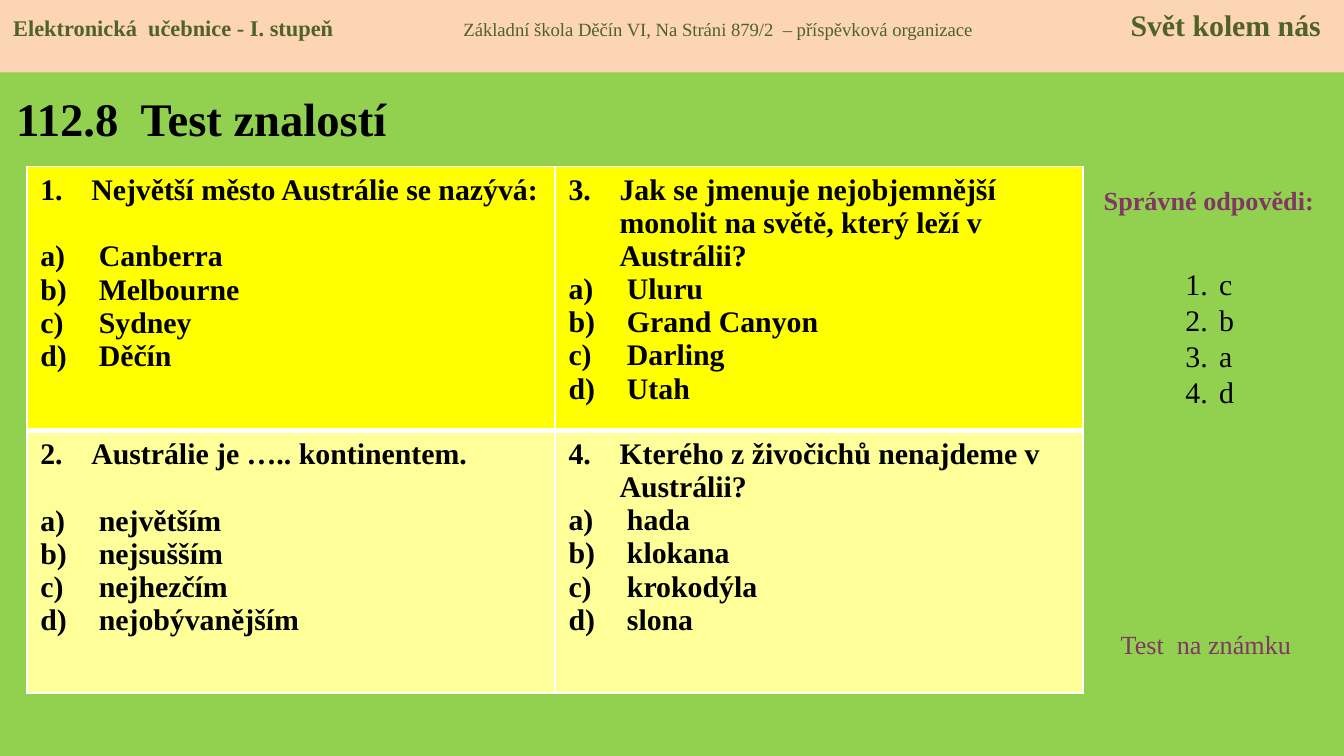
from lxml import etree
from pptx import Presentation
from pptx.dml.color import RGBColor
from pptx.enum.shapes import MSO_SHAPE
from pptx.enum.text import MSO_ANCHOR, MSO_AUTO_SIZE, PP_ALIGN
from pptx.oxml.ns import qn
from pptx.util import Inches, Pt

RECTANGLE = MSO_SHAPE.RECTANGLE
TOP, MIDDLE = MSO_ANCHOR.TOP, MSO_ANCHOR.MIDDLE
LEFT, CENTER = PP_ALIGN.LEFT, PP_ALIGN.CENTER
NO_FIT = MSO_AUTO_SIZE.NONE

GREEN = RGBColor(0x92, 0xD0, 0x50)
PEACH = RGBColor(0xFC, 0xD5, 0xB5)
OLIVE = RGBColor(0x4F, 0x62, 0x28)
PLUM = RGBColor(0x81, 0x37, 0x63)
BLACK = RGBColor(0, 0, 0)
YELLOW = RGBColor(0xFF, 0xFF, 0x00)
PALE_YELLOW = RGBColor(0xFF, 0xFF, 0x99)
WHITE = RGBColor(0xFF, 0xFF, 0xFF)

FONT = "Times New Roman"
WIDTH = 10
HEIGHT = WIDTH * 9 / 16
COLUMN_WIDTH, ROW_HEIGHT = 3.93, 1.95
ROW_FILLS = [YELLOW, PALE_YELLOW]
LINE_GAP = 18

QUESTIONS = [
    ("Největší město Austrálie se nazývá:",
     ["Canberra", "Melbourne", "Sydney", "Děčín"], LINE_GAP),
    ("Austrálie je ….. kontinentem.",
     ["největším", "nejsušším", "nejhezčím", "nejobývanějším"], LINE_GAP),
    ("Jak se jmenuje nejobjemnější monolit na světě, který leží v Austrálii?",
     ["Uluru", "Grand Canyon", "Darling", "Utah"], 0),
    ("Kterého z živočichů nenajdeme v Austrálii?",
     ["hada", "klokana", "krokodýla", "slona"], 0),
]
ANSWERS = ["c", "b", "a", "d"]


def place(box, left, top, width, height):
    box.left, box.top = Inches(left), Inches(top)
    box.width, box.height = Inches(width), Inches(height)


def add_span(para, text, size, color, bold=False):
    span = para.add_run()
    span.text = text
    span.font.name = FONT
    span.font.size = Pt(size)
    span.font.bold = bold
    span.font.color.rgb = color


def next_para(frame, index):
    return frame.add_paragraph() if index else frame.paragraphs[0]


def number_para(para, scheme, indent, start=1):
    properties = para._p.get_or_add_pPr()
    properties.set("marL", str(Inches(indent)))
    properties.set("indent", str(-Inches(indent)))
    number = etree.SubElement(properties, qn("a:buAutoNum"), type=scheme)
    if start > 1:
        number.set("startAt", str(start))


def add_label(page, text, left, top, width, align, bold=False):
    box = page.shapes.add_textbox(0, 0, 0, 0)
    place(box, left, top, width, 0.34)
    box.text_frame.word_wrap = True
    para = box.text_frame.paragraphs[0]
    para.alignment = align
    add_span(para, text, 14, PLUM, bold)


def add_header(page):
    banner = page.shapes.add_shape(RECTANGLE, 0, 0, Inches(WIDTH), Inches(0.54))
    banner.shadow.inherit = False
    banner.fill.solid()
    banner.fill.fore_color.rgb = PEACH
    banner.line.fill.background()
    frame = banner.text_frame
    frame.word_wrap = True
    frame.vertical_anchor = TOP
    para = frame.paragraphs[0]
    para.alignment = LEFT
    tabs = etree.SubElement(para._p.get_or_add_pPr(), qn("a:tabLst"))
    for position, side in [(3.35, "l"), (9.73, "r")]:
        etree.SubElement(tabs, qn("a:tab"), pos=str(Inches(position)), algn=side)
    add_span(para, "Elektronická  učebnice - I. stupeň\t", 12, OLIVE, True)
    add_span(para, "Základní škola Děčín VI, Na Stráni 879/2  – příspěvková organizace\t", 10, OLIVE)
    add_span(para, "Svět kolem nás", 16, OLIVE, True)


def fill_title(title):
    place(title, 0.02, 0.55, 3.19, 0.65)
    title.text_frame.vertical_anchor = MIDDLE
    title.text_frame.auto_size = NO_FIT
    para = title.text_frame.paragraphs[0]
    para.alignment = LEFT
    add_span(para, "112.8  Test znalostí", 25, BLACK, True)


def fill_answers(box):
    place(box, 8.72, 1.65, 0.55, 1.99)
    frame = box.text_frame
    frame.auto_size = NO_FIT
    frame.vertical_anchor = TOP
    frame.margin_top = Inches(0.33)
    frame.margin_right = 0
    for index, answer in enumerate(ANSWERS):
        para = next_para(frame, index)
        para.alignment = LEFT
        para.space_before = Pt(0)
        number_para(para, "arabicPeriod", 0.25)
        add_span(para, answer, 16, BLACK)


def style_cell(cell, fill, edges):
    properties = cell._tc.get_or_add_tcPr()
    for edge, width in edges.items():
        line = etree.SubElement(properties, qn(f"a:ln{edge}"), w=str(Pt(width)))
        paint = etree.SubElement(line, qn("a:solidFill"))
        etree.SubElement(paint, qn("a:srgbClr"), val=str(WHITE))
    cell.fill.solid()
    cell.fill.fore_color.rgb = fill


def fill_question(cell, number, question, options, gap):
    frame = cell.text_frame
    para = frame.paragraphs[0]
    para.space_after = Pt(gap)
    number_para(para, "arabicPeriod", 0.38, number)
    add_span(para, question, 16, BLACK, True)
    for option in options:
        para = frame.add_paragraph()
        number_para(para, "alphaLcParenR", 0.38)
        add_span(para, f" {option}", 16, BLACK, True)


def add_quiz(page):
    holder = page.shapes.add_table(
        2, 2, Inches(0.2), Inches(1.24), Inches(2 * COLUMN_WIDTH), Inches(2 * ROW_HEIGHT))
    table = holder.table
    table.first_row = False
    table.horz_banding = False
    for row in table.rows:
        row.height = Inches(ROW_HEIGHT)
    for index, (question, options, gap) in enumerate(QUESTIONS):
        column, row = divmod(index, 2)
        cell = table.cell(row, column)
        edges = {"L": 1, "R": 1, "T": 3 if row else 1, "B": 1 if row else 3}
        style_cell(cell, ROW_FILLS[row], edges)
        fill_question(cell, index + 1, question, options, gap)


def main():
    deck = Presentation()
    deck.slide_width, deck.slide_height = Inches(WIDTH), Inches(HEIGHT)
    page = deck.slides.add_slide(deck.slide_layouts[0])
    page.background.fill.solid()
    page.background.fill.fore_color.rgb = GREEN
    fill_title(page.shapes.title)
    fill_answers(page.placeholders[1])
    add_label(page, "Správné odpovědi:", 8.05, 1.32, 1.89, CENTER, True)
    add_quiz(page)
    add_label(page, "Test  na známku", 8.24, 4.63, 1.57, LEFT)
    add_header(page)
    deck.save("out.pptx")


if __name__ == "__main__":
    main()
